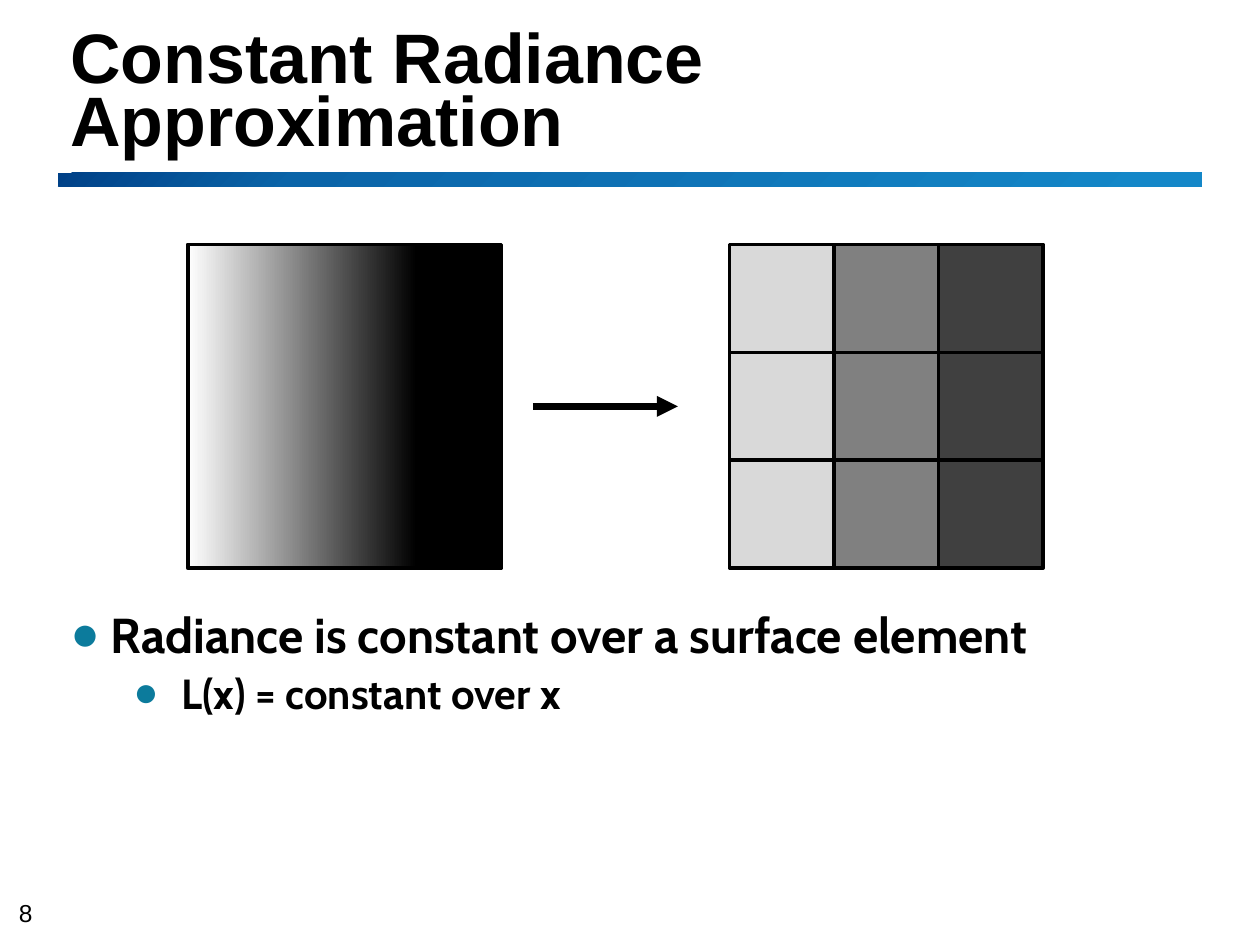
from lxml import etree
from pptx import Presentation
from pptx.dml.color import RGBColor
from pptx.enum.shapes import MSO_CONNECTOR as Connector, MSO_SHAPE as Shape
from pptx.enum.text import MSO_ANCHOR as Anchor
from pptx.oxml.ns import qn
from pptx.util import Inches, Pt

BLACK = RGBColor(0x00, 0x00, 0x00)
BULLET_TEAL = RGBColor(0x0C, 0x7B, 0x9C)
BAR_STOPS = [(0, RGBColor(0x00, 0x41, 0x87)), (21, RGBColor(0x0A, 0x64, 0xA8)),
             (96, RGBColor(0x14, 0x87, 0xC8))]
RADIANCE_STOPS = [(0, RGBColor(0xFF, 0xFF, 0xFF)), (73, BLACK), (100, BLACK)]
COLUMN_GREYS = [RGBColor(0xD9, 0xD9, 0xD9), RGBColor(0x80, 0x80, 0x80),
                RGBColor(0x40, 0x40, 0x40)]

TITLE = "Constant Radiance Approximation"
PAGE_NUMBER = "8"
BULLETS = [
    {"text": "Radiance is constant over a surface element",
     "level": 0, "size": 28, "margin": 0.32, "hanging": 0.32},
    {"text": "L(x) = constant over x",
     "level": 1, "size": 24, "margin": 0.88, "hanging": 0.38},
]

SLIDE_WIDTH, SLIDE_HEIGHT = 10, 7.5
CONTENT_LEFT, CONTENT_WIDTH = 0.46, 9.08
SURFACE_WIDTH, SURFACE_HEIGHT = 2.49, 2.57
SURFACE_TOP = 1.94
SMOOTH_LEFT, ELEMENTS_LEFT = 1.49, 5.79
ROWS = 3
ARROW_START, ARROW_END = 4.23, 5.38

presentation = Presentation()
presentation.slide_width = Inches(SLIDE_WIDTH)
presentation.slide_height = Inches(SLIDE_HEIGHT)
slide = presentation.slides.add_slide(presentation.slide_layouts[6])


def add_child(parent, tag, **attributes):
    return etree.SubElement(parent, qn(tag), attributes)


def add_rectangle(left, top, width, height, outline=True):
    shape = slide.shapes.add_shape(Shape.RECTANGLE, Inches(left), Inches(top),
                                   Inches(width), Inches(height))
    shape.shadow.inherit = False
    if outline:
        shape.line.color.rgb = BLACK
        shape.line.width = Pt(2)
    else:
        shape.line.fill.background()
    return shape


def fill_gradient(shape, stops, angle):
    shape.fill.gradient()
    shape.fill.gradient_angle = angle
    stop_list = shape._element.spPr.find(qn("a:gradFill")).find(qn("a:gsLst"))
    for old_stop in list(stop_list):
        stop_list.remove(old_stop)
    for position, color in stops:
        stop = add_child(stop_list, "a:gs", pos=str(position * 1000))
        add_child(stop, "a:srgbClr", val=str(color))


def add_text_frame(left, top, width, height, anchor=Anchor.TOP):
    box = slide.shapes.add_textbox(Inches(left), Inches(top), Inches(width), Inches(height))
    frame = box.text_frame
    frame.word_wrap = True
    frame.vertical_anchor = anchor
    return frame


def style(paragraph, font_name, size, bold):
    font = paragraph.font
    font.name, font.size, font.bold = font_name, Pt(size), bold
    font.color.rgb = BLACK


def add_bullet(paragraph, margin, hanging):
    properties = paragraph._p.get_or_add_pPr()
    properties.set("marL", str(Inches(margin)))
    properties.set("indent", str(-Inches(hanging)))
    color = add_child(properties, "a:buClr")
    add_child(color, "a:srgbClr", val=str(BULLET_TEAL))
    add_child(properties, "a:buFont", typeface="Arial")
    add_child(properties, "a:buChar", char="●")


number_frame = add_text_frame(0.15, 7.13, 0.34, 0.23, Anchor.BOTTOM)
number_frame.margin_left = number_frame.margin_right = 0
number_frame.margin_top = number_frame.margin_bottom = 0
number_frame.text = PAGE_NUMBER
style(number_frame.paragraphs[0], "Arial", 14, False)

title_bar = add_rectangle(CONTENT_LEFT, 1.37, CONTENT_WIDTH, 0.11, outline=False)
fill_gradient(title_bar, BAR_STOPS, -45 % 360)

title_frame = add_text_frame(CONTENT_LEFT, 0.33, CONTENT_WIDTH, 0.99, Anchor.BOTTOM)
title_frame.text = TITLE
title_frame.paragraphs[0].line_spacing = Pt(36)
style(title_frame.paragraphs[0], "Arial", 40, True)

body_frame = add_text_frame(CONTENT_LEFT, 4.84, CONTENT_WIDTH, 2.44)
for index, bullet in enumerate(BULLETS):
    paragraph = body_frame.add_paragraph() if index else body_frame.paragraphs[0]
    paragraph.text = bullet["text"]
    paragraph.level = bullet["level"]
    paragraph.line_spacing = Pt(27)
    paragraph.space_before, paragraph.space_after = Pt(0), Pt(4)
    add_bullet(paragraph, bullet["margin"], bullet["hanging"])
    style(paragraph, "Cabin", bullet["size"], True)

smooth_surface = add_rectangle(SMOOTH_LEFT, SURFACE_TOP, SURFACE_WIDTH, SURFACE_HEIGHT)
fill_gradient(smooth_surface, RADIANCE_STOPS, 0)

element_width = SURFACE_WIDTH / len(COLUMN_GREYS)
element_height = SURFACE_HEIGHT / ROWS
for column, grey in enumerate(COLUMN_GREYS):
    for row in range(ROWS):
        element = add_rectangle(ELEMENTS_LEFT + column * element_width,
                                SURFACE_TOP + row * element_height,
                                element_width, element_height)
        element.fill.solid()
        element.fill.fore_color.rgb = grey

arrow_height = Inches(SURFACE_TOP + SURFACE_HEIGHT / 2)
arrow = slide.shapes.add_connector(Connector.STRAIGHT, Inches(ARROW_START), arrow_height,
                                   Inches(ARROW_END), arrow_height)
arrow.line.color.rgb = BLACK
arrow.line.width = Pt(4)
add_child(arrow.line._get_or_add_ln(), "a:tailEnd", type="triangle")
add_child(arrow._element.spPr, "a:effectLst")

presentation.save("out.pptx")
